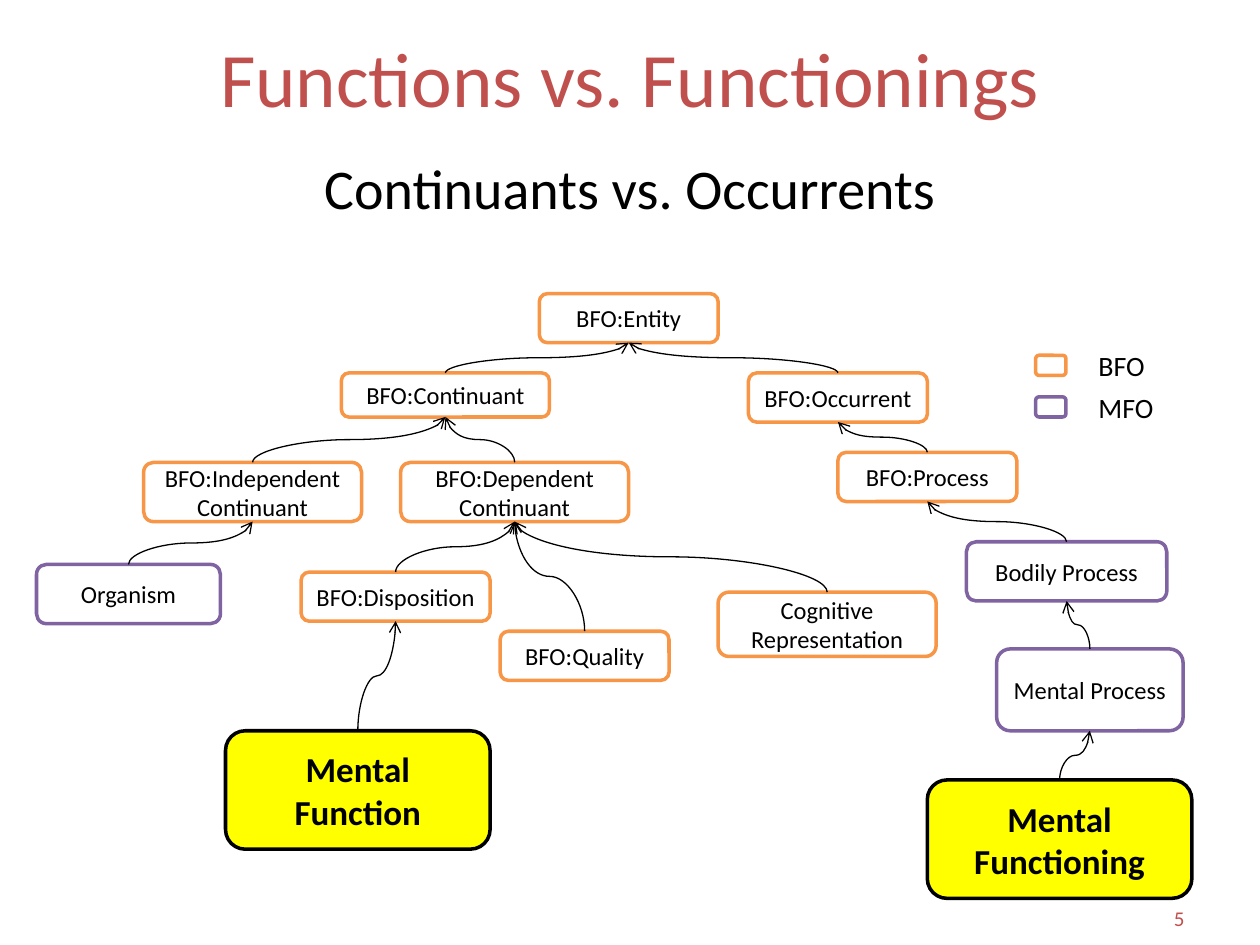
from pptx import Presentation
from pptx.dml.color import RGBColor
from pptx.enum.shapes import MSO_CONNECTOR, MSO_SHAPE
from pptx.enum.text import MSO_ANCHOR, PP_ALIGN
from pptx.oxml.ns import qn
from pptx.util import Inches, Pt
from lxml import etree

BFO, MFO, RED, BLACK = "F79646", "8064A2", "C0504D", "000000"
WHITE, YELLOW = "FFFFFF", "FFFF00"
CENTER, RIGHT, LEFT = PP_ALIGN.CENTER, PP_ALIGN.RIGHT, PP_ALIGN.LEFT
MIDDLE, TOP = MSO_ANCHOR.MIDDLE, MSO_ANCHOR.TOP

# text, (left, top, width, height), size, colour, alignment, anchor
TEXTS = [
    ("Functions vs. Functionings", (0.5, 0.17, 9, 0.87), 44, RED, CENTER, MIDDLE),
    ("Continuants vs. Occurrents", (0.5, 1.17, 9, 0.8), 32, BLACK, CENTER, TOP),
    ("5", (7.17, 7.15, 2.33, 0.27), 12, RED, RIGHT, MIDDLE),
]

# text, (left, top, width, height), line colour
CLASSES = [
    ("BFO:Entity", (4.28, 2.33, 1.42, 0.39), BFO),
    ("BFO:Continuant", (2.71, 2.96, 1.65, 0.35), BFO),
    ("BFO:Occurrent", (5.94, 2.96, 1.42, 0.39), BFO),
    ("BFO:Process", (6.65, 3.59, 1.42, 0.39), BFO),
    ("Organism", (0.29, 4.48, 1.46, 0.47), MFO),
    ("BFO:Independent Continuant", (1.14, 3.67, 1.73, 0.47), BFO),
    ("BFO:Dependent Continuant", (3.18, 3.67, 1.81, 0.47), BFO),
    ("Cognitive Representation", (5.7, 4.7, 1.73, 0.51), BFO),
    ("BFO:Quality", (3.97, 5.01, 1.34, 0.39), BFO),
    ("BFO:Disposition", (2.39, 4.54, 1.5, 0.39), BFO),
    ("Bodily Process", (7.67, 4.3, 1.59, 0.47), MFO),
    ("Mental Process", (7.91, 5.15, 1.48, 0.65), MFO),
]
HIGHLIGHTS = [
    ("Mental Function", (1.79, 5.8, 2.1, 0.94)),
    ("Mental Functioning", (7.36, 6.19, 2.1, 0.94)),
]

# child: parent
IS_A = {
    "BFO:Continuant": "BFO:Entity",
    "BFO:Occurrent": "BFO:Entity",
    "BFO:Process": "BFO:Occurrent",
    "BFO:Independent Continuant": "BFO:Continuant",
    "BFO:Dependent Continuant": "BFO:Continuant",
    "Organism": "BFO:Independent Continuant",
    "BFO:Disposition": "BFO:Dependent Continuant",
    "BFO:Quality": "BFO:Dependent Continuant",
    "Cognitive Representation": "BFO:Dependent Continuant",
    "Bodily Process": "BFO:Process",
    "Mental Process": "Bodily Process",
    "Mental Function": "BFO:Disposition",
    "Mental Functioning": "Mental Process",
}

LEGEND = [("BFO", BFO), ("MFO", MFO)]
LEGEND_TOP, LEGEND_STEP = 2.82, 0.33


def rgb(value):
    return RGBColor.from_string(value)


def write(shape, text, size, color=BLACK, align=CENTER, anchor=MIDDLE,
          bold=False, wrap=True):
    tf = shape.text_frame
    tf.word_wrap = wrap
    tf.vertical_anchor = anchor
    p = tf.paragraphs[0]
    p.alignment = align
    r = p.add_run()
    r.text = text
    r.font.name = "Calibri"
    r.font.size = Pt(size)
    r.font.bold = bold
    r.font.color.rgb = rgb(color)


def add_text(slide, text, box, *style, **options):
    write(slide.shapes.add_textbox(*map(Inches, box)), text, *style, **options)


def add_box(slide, box, line, fill=WHITE):
    s = slide.shapes.add_shape(MSO_SHAPE.ROUNDED_RECTANGLE, *map(Inches, box))
    s.shadow.inherit = False
    s.fill.solid()
    s.fill.fore_color.rgb = rgb(fill)
    s.line.color.rgb = rgb(line)
    s.line.width = Pt(2)
    return s


def add_is_a(slide, child, parent):
    """Curve from the top of the child up to the bottom of the parent."""
    x1, y1 = child.left + child.width // 2, child.top
    x2, y2 = parent.left + parent.width // 2, parent.top + parent.height
    c = slide.shapes.add_connector(MSO_CONNECTOR.CURVE, x1, y1, x2, y2)
    c.begin_connect(child, 0)
    c.end_connect(parent, 2)

    # The curve runs sideways by default, so it is laid flat and turned upright.
    c.width, c.height = y1 - y2, abs(x2 - x1)
    c.left = (x1 + x2 - c.width) // 2
    c.top = (y1 + y2 - c.height) // 2
    rightward = x2 > x1
    spPr = c._element.spPr
    xfrm = spPr.find(qn("a:xfrm"))
    xfrm.set("rot", str((90 if rightward else 270) * 60000))
    xfrm.set("flipH", "1" if rightward else "0")
    xfrm.set("flipV", "1")

    c.line.color.rgb = rgb(BLACK)
    c.line.width = Pt(0.75)
    etree.SubElement(spPr.find(qn("a:ln")), qn("a:tailEnd"), type="arrow")
    etree.SubElement(spPr, qn("a:effectLst"))


def main():
    prs = Presentation()
    prs.slide_width, prs.slide_height = Inches(10), Inches(7.5)
    slide = prs.slides.add_slide(prs.slide_layouts[6])

    for text, box, *style in TEXTS:
        add_text(slide, text, box, *style)

    nodes = {}
    for text, box, line in CLASSES:
        nodes[text] = add_box(slide, box, line)
        write(nodes[text], text, 14)
    for text, box in HIGHLIGHTS:
        nodes[text] = add_box(slide, box, BLACK, YELLOW)
        write(nodes[text], text, 20, bold=True)

    for child, parent in IS_A.items():
        add_is_a(slide, nodes[child], nodes[parent])

    for i, (label, color) in enumerate(LEGEND):
        top = LEGEND_TOP + i * LEGEND_STEP
        add_box(slide, (8.22, top, 0.24, 0.16), color)
        add_text(slide, label, (8.62, top - 0.1, 0.64, 0.37), 16,
                 align=LEFT, anchor=TOP, wrap=False)

    prs.save("out.pptx")


if __name__ == "__main__":
    main()
